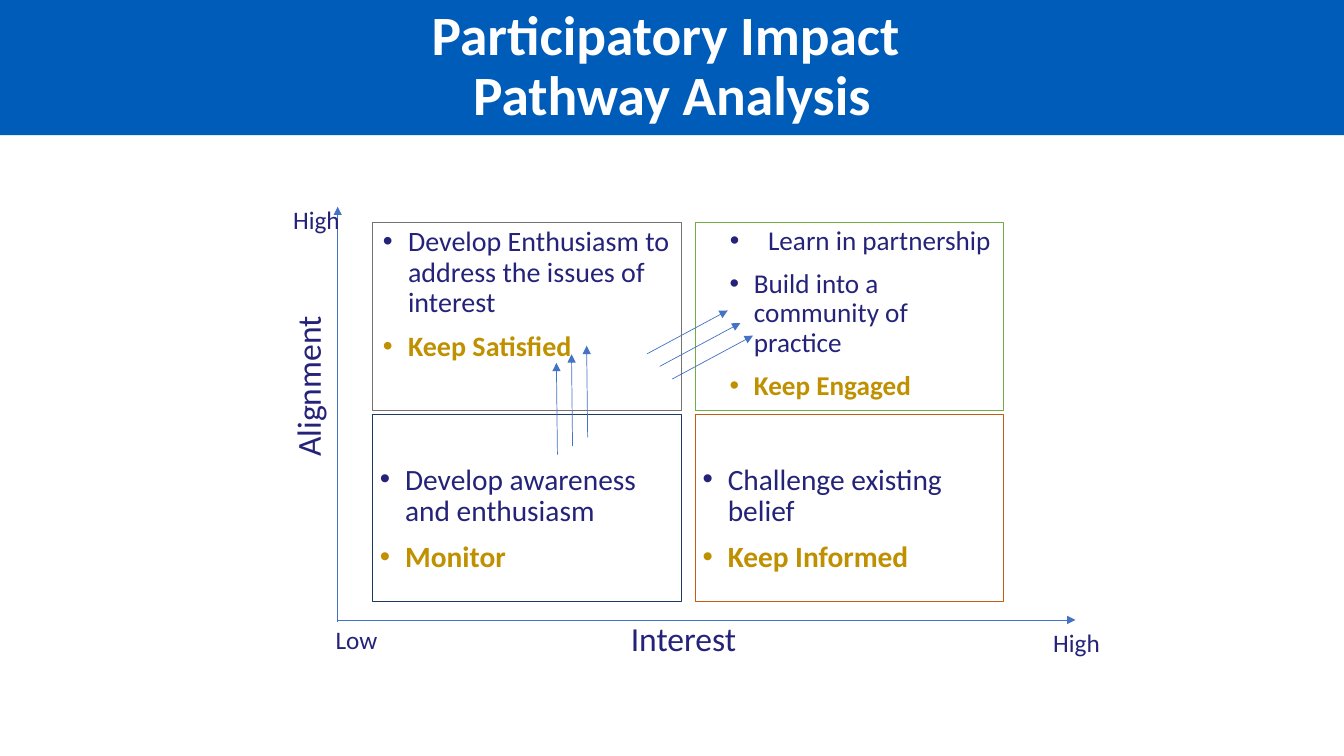
from dataclasses import dataclass
from pptx import Presentation
from pptx.dml.color import RGBColor
from pptx.enum.shapes import MSO_CONNECTOR as Line, MSO_SHAPE as Shape
from pptx.enum.text import MSO_ANCHOR as Anchor, PP_ALIGN as Align
from pptx.oxml.ns import qn
from pptx.util import Emu, Inches, Pt
from lxml.etree import SubElement


@dataclass(frozen=True)
class Theme:
    font: str = "Calibri"
    band: str = "005CB9"
    white: str = "FFFFFF"
    ink: str = "242379"
    gold: str = "BF9000"
    arrow: str = "4472C4"
    title: float = 39.6
    axis: float = 24
    tick: float = 18


@dataclass(frozen=True)
class Box:
    """Area in columns and rows of the slide grid."""
    x: float
    y: float
    w: float
    h: float


@dataclass(frozen=True)
class Card:
    edge: str
    size: float
    side: float  # left and right inset
    top: float
    items: tuple  # text, left margin, hanging indent


THEME = Theme()
CELL = Inches(0.1)  # one column or row of the grid
WIDE, TALL = 133.33, 75
GAP_X, GAP_Y = 1.4, 0.4
HANG = (2.5, 2.5)
DEEP = (5.1, 2.4)

CARDS = (
    Card("767171", 20, 1, 0.5, (
        ("Develop Enthusiasm to address the issues of interest", *HANG),
        ("Keep Satisfied", *HANG))),
    Card("70AD47", 19.4, 0.7, 0.4, (
        ("Learn in partnership", 6.5, 3.8),
        ("Build into a community of practice", *DEEP),
        ("Keep Engaged", *DEEP))),
    Card("203864", 21, 0.7, 5, (
        ("Develop awareness and enthusiasm", *HANG),
        ("Monitor", *HANG))),
    Card("C55A11", 21, 0.7, 5, (
        ("Challenge existing belief", *HANG),
        ("Keep Informed", *HANG))),
)


def span(*cells):
    return [Emu(round(n * CELL)) for n in cells]


def paint(hue):
    return RGBColor.from_string(hue)


def add_run(para, text, size, hue, bold=False):
    run = para.add_run()
    run.text = text
    font = run.font
    font.name, font.size, font.bold = THEME.font, Pt(size), bold
    font.color.rgb = paint(hue)


def add_rect(slide, box, fill=None, edge=None):
    rect = slide.shapes.add_shape(
        Shape.RECTANGLE, *span(box.x, box.y, box.w, box.h))
    rect.shadow.inherit = False
    if fill:
        rect.fill.solid()
        rect.fill.fore_color.rgb = paint(fill)
    else:
        rect.fill.background()
    if edge:
        rect.line.color.rgb = paint(edge)
        rect.line.width = Pt(0.75)
    else:
        rect.line.fill.background()
    rect.text_frame.word_wrap = True
    return rect


def add_arrow(slide, x, y, dx, dy):
    line = slide.shapes.add_connector(
        Line.STRAIGHT, *span(x, y, x + dx, y + dy))
    line.line.color.rgb = paint(THEME.arrow)
    line.line.width = Pt(0.5)
    props = line.line._get_or_add_ln()
    SubElement(props, qn("a:tailEnd"), type="triangle")
    SubElement(props.getparent(), qn("a:effectLst"))


def add_label(slide, text, size, box, turn=False):
    frame = slide.shapes.add_textbox(
        *span(box.x, box.y, box.w, box.h)).text_frame
    frame.word_wrap = False
    if turn:
        frame._txBody.bodyPr.set("vert", "vert270")
    add_run(frame.paragraphs[0], text, size, THEME.ink)


def add_title(slide, box):
    frame = add_rect(slide, box, fill=THEME.band).text_frame
    frame.vertical_anchor = Anchor.MIDDLE
    para = frame.paragraphs[0]
    para.alignment, para.line_spacing = Align.CENTER, 0.9
    add_run(para, "Participatory Impact ", THEME.title, THEME.white, True)
    para.add_line_break()
    add_run(para, "Pathway Analysis", THEME.title, THEME.white, True)


def add_card(slide, box, card):
    """Draw a bullet card whose last item is the gold action."""
    frame = add_rect(slide, box, edge=card.edge).text_frame
    frame.vertical_anchor = Anchor.TOP
    frame.margin_left, frame.margin_top = span(card.side, card.top)
    frame.margin_right, frame.margin_bottom = span(card.side, 0.4)
    for i, (text, left, hang) in enumerate(card.items):
        para = frame.add_paragraph() if i else frame.paragraphs[0]
        last = i == len(card.items) - 1
        para.alignment, para.line_spacing = Align.LEFT, 0.9
        para.space_before = Pt(10 if i else 0)
        props = para._p.get_or_add_pPr()
        inset, indent = span(left, -hang)
        props.set("marL", str(inset))
        props.set("indent", str(indent))
        SubElement(props, qn("a:buFont"), typeface="Arial")
        SubElement(props, qn("a:buChar"), char="•")
        add_run(para, text, card.size, THEME.gold if last else THEME.ink, last)


def add_matrix(slide, box):
    wide, tall = (box.w - GAP_X) / 2, (box.h - GAP_Y) / 2
    for i, card in enumerate(CARDS):
        row, col = divmod(i, 2)
        spot = Box(box.x + col * (wide + GAP_X),
                   box.y + row * (tall + GAP_Y), wide, tall)
        add_card(slide, spot, card)


def add_axes(slide, box):
    """Draw the axes and their labels around the matrix box."""
    x, y = box.x - 3.5, box.y + box.h + 1.8
    add_arrow(slide, x, y + 0.2, 0, -41.2)
    add_arrow(slide, x, y, 73.2, 0)
    add_label(slide, "Alignment", THEME.axis,
              Box(x - 5.5, y - 30.3, 6.1, 15.1), turn=True)
    add_label(slide, "Interest", THEME.axis, Box(x + 28.1, y - 0.7, 12.6, 5.1))
    for text, dx, dy, w in (("Low", -1.2, -0.1, 6.2),
                            ("High", 70, 0.2, 8.5),
                            ("High", -5.4, -41.7, 8.5)):
        add_label(slide, text, THEME.tick, Box(x + dx, y + dy, w, 4))


def add_moves(slide, box):
    """Draw the two sets of three arrows that cross between cards."""
    for x, y, dx, dy, step_x, step_y in (
            (18.3, 23, -0.1, -9.1, 1.5, -0.85),
            (27.2, 13, 8, -4.3, 1.25, 1.25)):
        for i in range(3):
            add_arrow(slide, box.x + x + i * step_x,
                      box.y + y + i * step_y, dx, dy)


def main():
    deck = Presentation()
    deck.slide_width, deck.slide_height = span(WIDE, TALL)
    slide = deck.slides.add_slide(deck.slide_layouts[6])
    add_title(slide, Box(0, 0, WIDE, 13.4))
    grid = Box(37, 22.1, 62.6, 37.6)
    for draw in (add_matrix, add_axes, add_moves):
        draw(slide, grid)
    deck.save("out.pptx")


if __name__ == "__main__":
    main()
